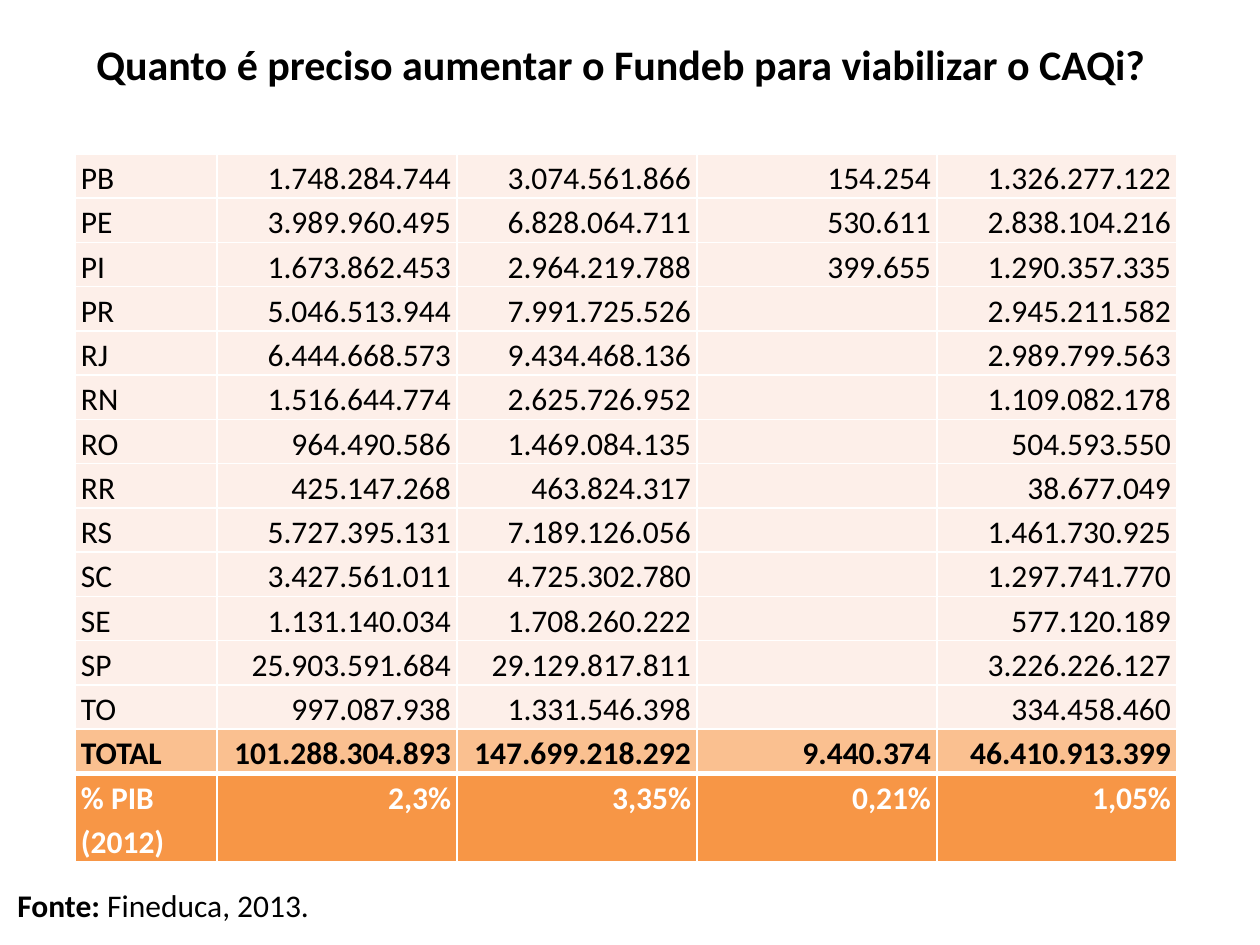
from dataclasses import dataclass

from lxml.etree import SubElement
from pptx import Presentation
from pptx.dml.color import RGBColor
from pptx.enum.text import MSO_AUTO_SIZE as AutoSize, MSO_VERTICAL_ANCHOR as Anchor, PP_ALIGN as Align
from pptx.oxml.ns import qn
from pptx.util import Emu, Pt


@dataclass(frozen=True)
class Theme:
    font: str = "Calibri"
    ink: str = "000000"
    white: str = "FFFFFF"
    state_fill: str = "FDEFE9"
    total_fill: str = "FAC090"
    gdp_fill: str = "F79646"
    title_size: int = 24
    body_size: int = 18
    rule: int = 1
    thick_rule: int = 3


PX_PER_INCH = 126
STATES = [
    ("PB", "1.748.284.744", "3.074.561.866", "154.254", "1.326.277.122"),
    ("PE", "3.989.960.495", "6.828.064.711", "530.611", "2.838.104.216"),
    ("PI", "1.673.862.453", "2.964.219.788", "399.655", "1.290.357.335"),
    ("PR", "5.046.513.944", "7.991.725.526", "", "2.945.211.582"),
    ("RJ", "6.444.668.573", "9.434.468.136", "", "2.989.799.563"),
    ("RN", "1.516.644.774", "2.625.726.952", "", "1.109.082.178"),
    ("RO", "964.490.586", "1.469.084.135", "", "504.593.550"),
    ("RR", "425.147.268", "463.824.317", "", "38.677.049"),
    ("RS", "5.727.395.131", "7.189.126.056", "", "1.461.730.925"),
    ("SC", "3.427.561.011", "4.725.302.780", "", "1.297.741.770"),
    ("SE", "1.131.140.034", "1.708.260.222", "", "577.120.189"),
    ("SP", "25.903.591.684", "29.129.817.811", "", "3.226.226.127"),
    ("TO", "997.087.938", "1.331.546.398", "", "334.458.460"),
]
TOTAL = ("TOTAL", "101.288.304.893", "147.699.218.292", "9.440.374", "46.410.913.399")
GDP_SHARE = ("% PIB (2012)", "2,3%", "3,35%", "0,21%", "1,05%")


def px(length):
    return Emu(round(length * 914400 / PX_PER_INCH))


def write(paragraph, text, *, font, size, color, bold=False):
    run = paragraph.add_run()
    run.text = text
    run.font.name = font
    run.font.size = Pt(size)
    run.font.bold = bold
    run.font.color.rgb = RGBColor.from_string(color)


class SlideBuilder:
    def __init__(self, slide, theme):
        self.slide = slide
        self.theme = theme

    def label(self, left, top, width, height, parts, size):
        frame = self.slide.shapes.add_textbox(px(left), px(top), px(width), px(height)).text_frame
        frame.word_wrap = False
        frame.auto_size = AutoSize.SHAPE_TO_FIT_TEXT
        for text, bold in parts:
            write(frame.paragraphs[0], text, font=self.theme.font, size=size,
                  color=self.theme.ink, bold=bold)

    def border(self, cell, top_rule):
        properties = cell._tc.get_or_add_tcPr()
        for side in "LRTB":
            width = top_rule if side == "T" else self.theme.rule
            line = SubElement(properties, qn(f"a:ln{side}"), w=str(Pt(width)))
            fill = SubElement(line, qn("a:solidFill"))
            SubElement(fill, qn("a:srgbClr"), val=self.theme.white)

    def cell(self, cell, text, align, fill, color, bold, top_rule):
        self.border(cell, top_rule)
        cell.fill.solid()
        cell.fill.fore_color.rgb = RGBColor.from_string(fill)
        cell.margin_left = cell.margin_right = px(6)
        cell.margin_top = cell.margin_bottom = 0
        cell.vertical_anchor = Anchor.TOP
        paragraph = cell.text_frame.paragraphs[0]
        paragraph.alignment = align
        paragraph.line_spacing = 1.15
        paragraph.space_after = Pt(10)
        if text:
            write(paragraph, text, font=self.theme.font, size=self.theme.body_size,
                  color=color, bold=bold)

    def table(self, left, top, column_widths, bands):
        rows = [(values, height, style) for records, height, style in bands for values in records]
        total_height = sum(height for _, height, _ in rows)
        table = self.slide.shapes.add_table(
            len(rows), len(column_widths), px(left), px(top),
            px(sum(column_widths)), px(total_height)).table
        table.first_row = table.horz_banding = False
        for column, width in zip(table.columns, column_widths):
            column.width = px(width)
        for row, (values, height, style) in zip(table.rows, rows):
            row.height = px(height)
            for index, (cell, text) in enumerate(zip(row.cells, values)):
                self.cell(cell, text, Align.RIGHT if index else Align.LEFT, **style)


def main():
    theme = Theme()
    deck = Presentation()
    deck.slide_width, deck.slide_height = px(1260), px(945)
    builder = SlideBuilder(deck.slides.add_slide(deck.slide_layouts[6]), theme)

    state_style = dict(fill=theme.state_fill, color=theme.ink, bold=False, top_rule=theme.rule)
    total_style = dict(state_style, fill=theme.total_fill, bold=True)
    gdp_style = dict(fill=theme.gdp_fill, color=theme.white, bold=True, top_rule=theme.thick_rule)
    builder.table(75, 154, [142] + [240] * 4, [
        (STATES, 40, state_style),
        ([TOTAL], 40, total_style),
        ([GDP_SHARE], 82, gdp_style),
    ])
    builder.label(84, 32, 1084, 63,
                  [("Quanto é preciso aumentar o Fundeb para viabilizar o CAQi?", True)],
                  theme.title_size)
    builder.label(5, 880, 320, 50, [("Fonte: ", True), ("Fineduca, 2013.", False)], theme.body_size)
    deck.save("out.pptx")


if __name__ == "__main__":
    main()
